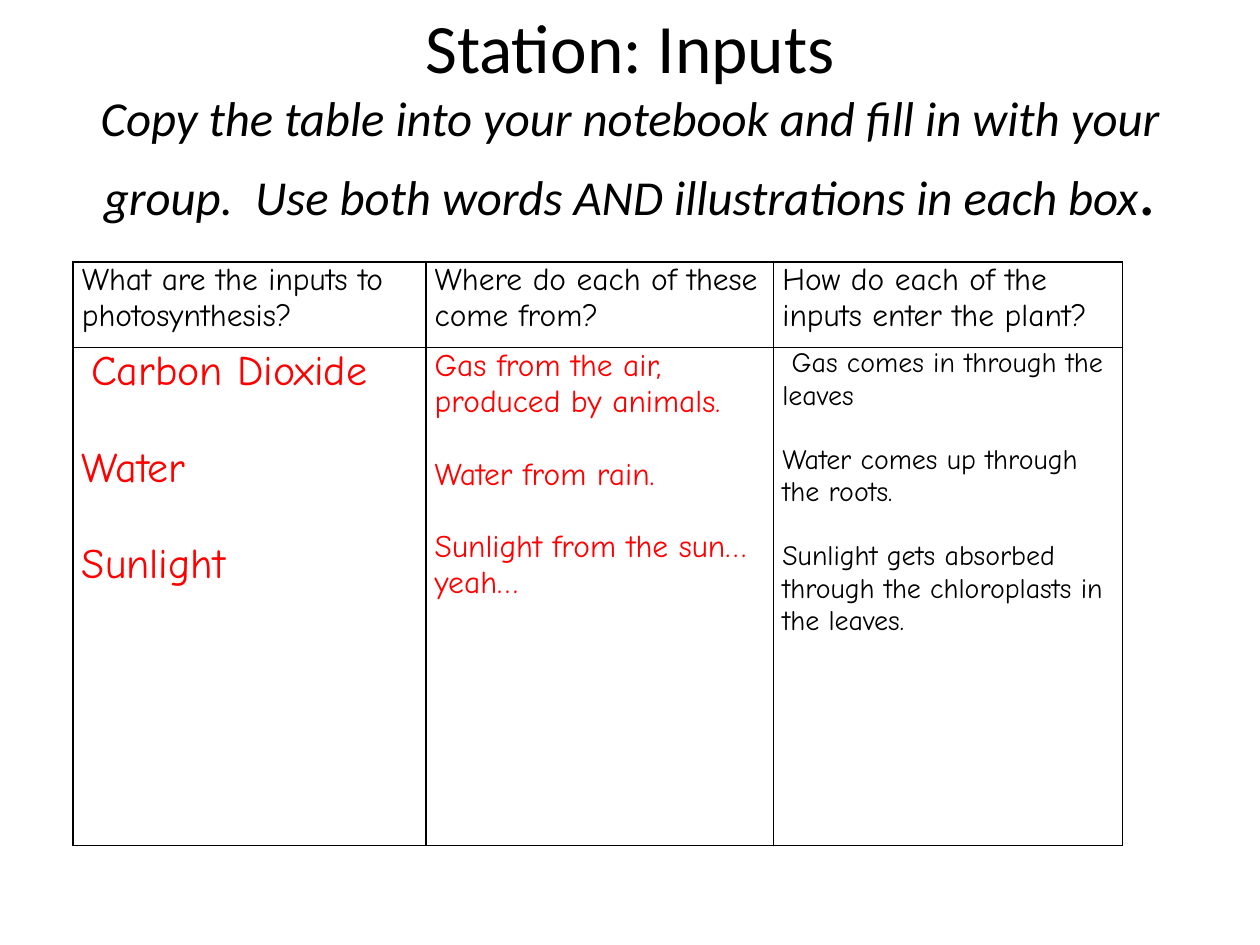
from dataclasses import dataclass

import pptx
import pptx.dml.color
import pptx.enum.text
import pptx.oxml
import pptx.oxml.ns
import pptx.util
from pptx.util import Inches

BLACK, RED, WHITE = "000000", "FF0000", "FFFFFF"
LINE_HEIGHT = 1.15


@dataclass
class Run:
    text: str
    size: float
    color: str = BLACK
    font: str = "Comic Neue"
    italic: bool = False


@dataclass
class Column:
    width: float
    question: str
    answers: list[list[Run]]


def rgb(value: str) -> pptx.dml.color.RGBColor:
    return pptx.dml.color.RGBColor.from_string(value)


def add_run(p, run: Run) -> None:
    r = p.add_run()
    r.text = run.text
    style = {"name": run.font, "size": pptx.util.Pt(run.size), "italic": run.italic, "bold": False}
    for key, value in style.items():
        setattr(r.font, key, value)
    r.font.color.rgb = rgb(run.color)


def add_title(s) -> None:
    sp = s.shapes.title
    box = {"left": 0.5, "top": 0.3, "width": 9, "height": 1.25}
    for key, value in box.items():
        setattr(sp, key, Inches(value))
    tf = sp.text_frame
    frame = {
        "word_wrap": True,
        "auto_size": pptx.enum.text.MSO_AUTO_SIZE.NONE,
        "vertical_anchor": pptx.enum.text.MSO_ANCHOR.MIDDLE,
    }
    for key, value in frame.items():
        setattr(tf, key, value)
    p = tf.paragraphs[0]
    p.alignment = pptx.enum.text.PP_ALIGN.CENTER
    add_run(p, Run("Station: Inputs", 39.6, font="Calibri"))
    p.add_line_break()
    instruction = (
        "Copy the table into your notebook and fill in with your group.  "
        "Use both words AND illustrations in each box"
    )
    add_run(p, Run(instruction, 27.9, font="Calibri", italic=True))
    add_run(p, Run(".", 39.6, font="Calibri"))


def add_borders(cell) -> None:
    pr = cell._tc.get_or_add_tcPr()
    for i, side in enumerate(("lnL", "lnR", "lnT", "lnB")):
        xml = (
            f'<a:{side} {pptx.oxml.ns.nsdecls("a")} w="{pptx.util.Pt(1)}">'
            f'<a:solidFill><a:srgbClr val="{BLACK}"/></a:solidFill></a:{side}>'
        )
        pr.insert(i, pptx.oxml.parse_xml(xml))


def fill_cell(cell, paragraphs: list[list[Run]]) -> None:
    margins = {"margin_left": 0.07, "margin_right": 0.07, "margin_top": 0, "margin_bottom": 0}
    for key, value in margins.items():
        setattr(cell, key, Inches(value))
    cell.fill.solid()
    cell.fill.fore_color.rgb = rgb(WHITE)
    add_borders(cell)
    tf = cell.text_frame
    for i, runs in enumerate(paragraphs):
        p = tf.add_paragraph() if i else tf.paragraphs[0]
        if i:
            p.space_before = pptx.util.Pt(round(runs[0].size * LINE_HEIGHT, 1))
        for run in runs:
            add_run(p, run)


def add_grid(s, columns: list[Column], heights: list[float]) -> None:
    width = sum(c.width for c in columns)
    frame = s.shapes.add_table(
        len(heights), len(columns), Inches(0.58), Inches(2.08), Inches(width), Inches(sum(heights))
    )
    table = frame.table
    for row, height in zip(table.rows, heights):
        row.height = Inches(height)
    for i, column in enumerate(columns):
        table.columns[i].width = Inches(column.width)
        fill_cell(table.cell(0, i), [[Run(column.question, 18)]])
        fill_cell(table.cell(1, i), column.answers)


COLUMNS = [
    Column(2.8, "What are the inputs to photosynthesis?", [
        [Run(" ", 16), Run("Carbon Dioxide", 24, RED)],
        [Run("Water", 24, RED)],
        [Run("Sunlight", 24, RED)],
    ]),
    Column(2.76, "Where do each of these come from?", [
        [Run("Gas from the air, produced by animals.", 18, RED)],
        [Run("Water from rain.", 18, RED)],
        [Run("Sunlight from the sun…yeah…", 18, RED)],
    ]),
    Column(2.77, "How do each of the inputs enter the plant?", [
        [Run(" Gas comes in through the leaves", 16)],
        [Run("Water comes up through the roots.", 16)],
        [Run("Sunlight gets absorbed through the chloroplasts in the leaves.", 16)],
    ]),
]


def main() -> None:
    prs = pptx.Presentation()
    prs.slide_width, prs.slide_height = Inches(10), Inches(7.5)
    s = prs.slides.add_slide(prs.slide_layouts[5])
    add_title(s)
    add_grid(s, COLUMNS, [0.68, 3.95])
    prs.save("out.pptx")


if __name__ == "__main__":
    main()
